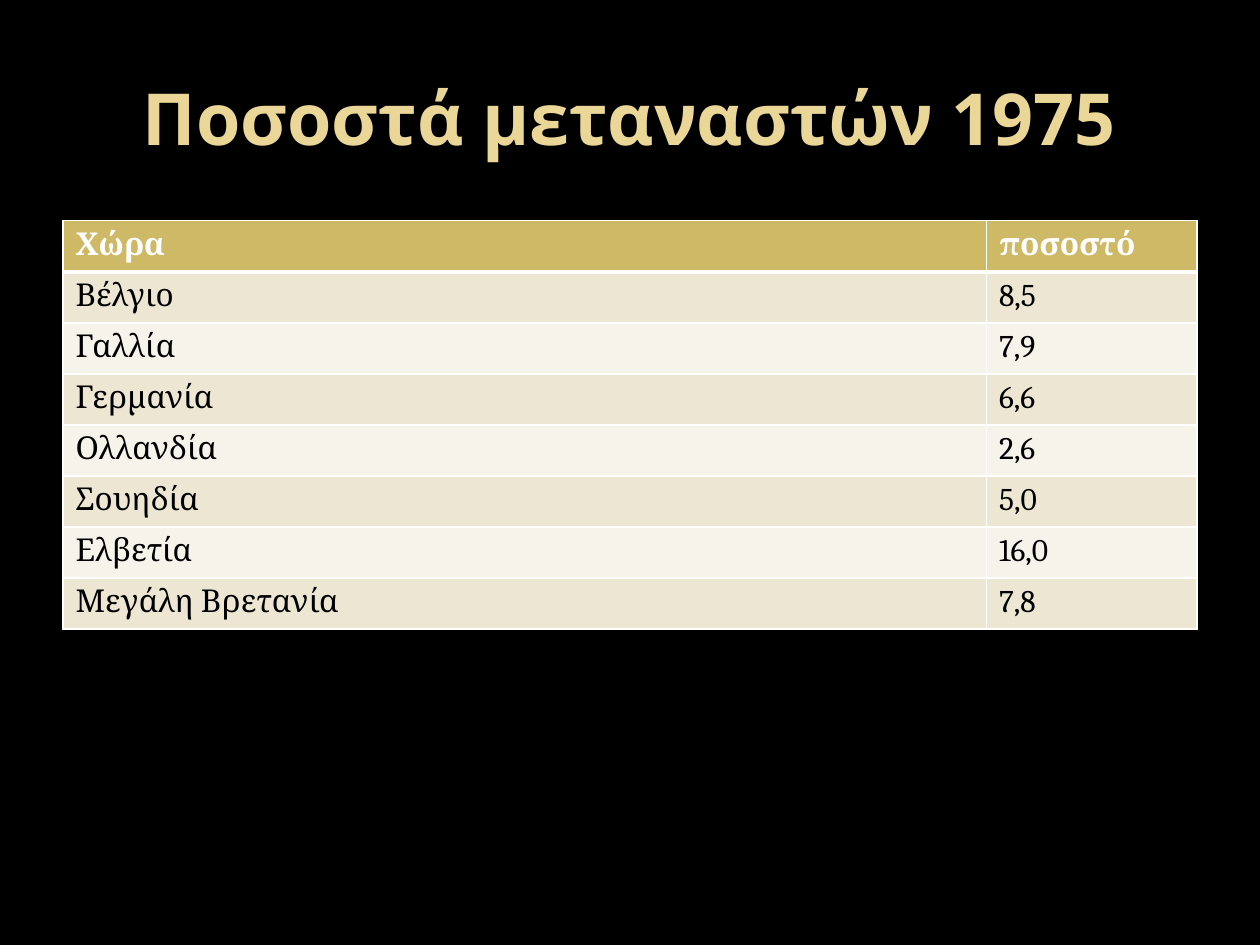
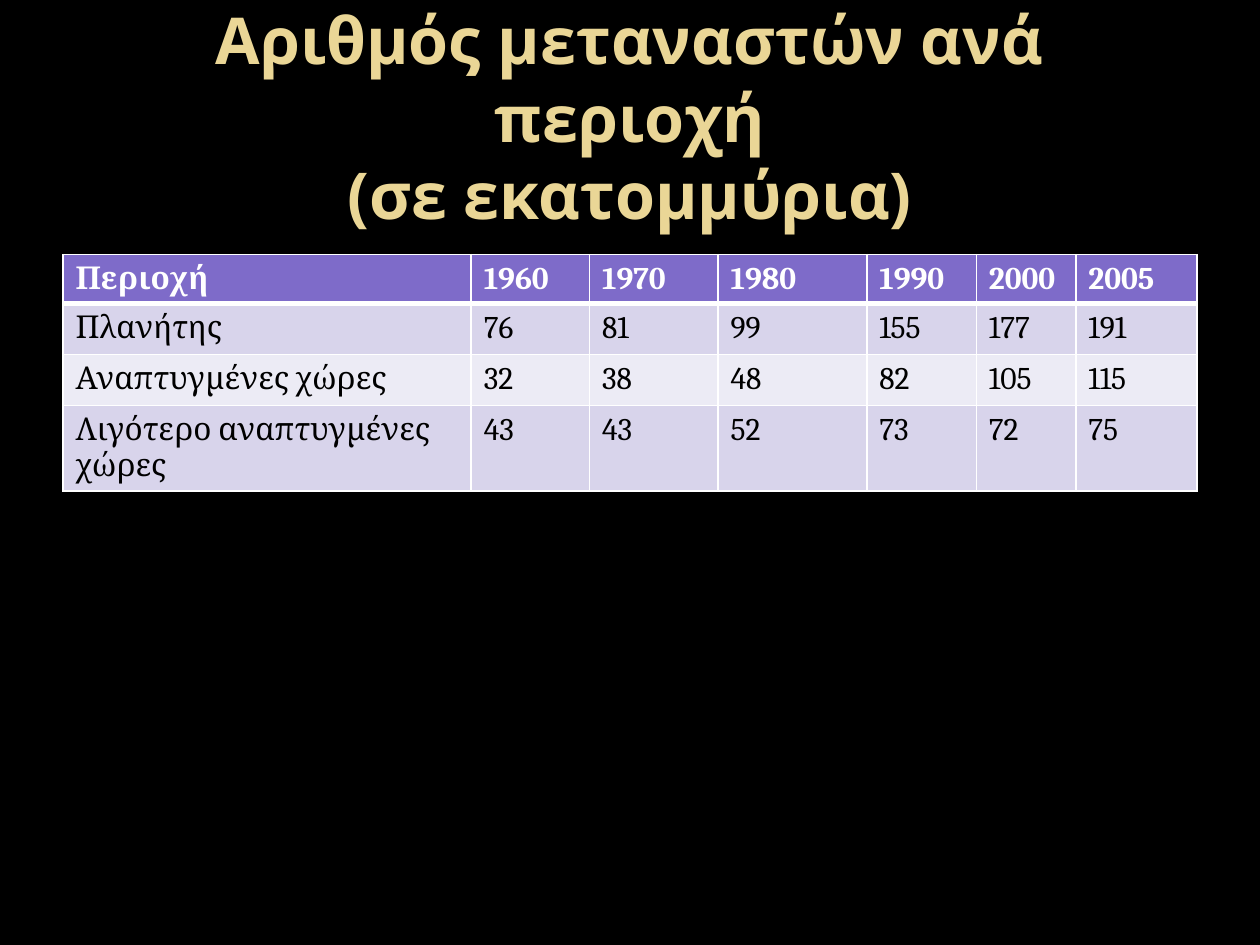
from lxml.etree import SubElement
from pptx import Presentation
from pptx.dml.color import RGBColor
from pptx.enum.text import MSO_ANCHOR, MSO_AUTO_SIZE, PP_ALIGN
from pptx.oxml.ns import qn
from pptx.util import Inches, Pt

# Content
SLIDES = [
    {
        "title": "Ποσοστά μεταναστών 1975",
        "title_size": 41,
        "top": 1.75,
        "cols": [7.33, 1.67],
        "header_height": 0.41,
        "fills": ("CEB966", "EDE6D3", "F6F3EA"),
        "rows": [
            ("Χώρα", "ποσοστό"),
            ("Βέλγιο", "8,5"),
            ("Γαλλία", "7,9"),
            ("Γερμανία", "6,6"),
            ("Ολλανδία", "2,6"),
            ("Σουηδία", "5,0"),
            ("Ελβετία", "16,0"),
            ("Μεγάλη Βρετανία", "7,8"),
        ],
    },
    {
        "title": "Αριθμός μεταναστών ανά περιοχή\v(σε εκατομμύρια)",
        "title_size": 36.9,
        "top": 2.02,
        "cols": [3.24, 0.94, 1.02, 1.18, 0.87, 0.79, 0.96],
        "header_height": 0.14,  # grows to fit its text
        "fills": ("7E6BC9", "D8D4EB", "ECEBF5"),
        "rows": [
            ("Περιοχή", "1960", "1970", "1980", "1990", "2000", "2005"),
            ("Πλανήτης", "76", "81", "99", "155", "177", "191"),
            ("Αναπτυγμένες χώρες", "32", "38", "48", "82", "105", "115"),
            ("Λιγότερο αναπτυγμένες χώρες", "43", "43", "52", "73", "72", "75"),
        ],
    },
]

# Shared look
BLACK, WHITE, GOLD = "000000", "FFFFFF", "EAD696"
TITLE_FONT, TABLE_FONT = "Open Sans", "Cambria"
LEFT, WIDTH = 0.5, 9
TITLE_TOP, TITLE_HEIGHT = 0.3, 1.25
ROW_HEIGHT = 0.405


def rgb(value):
    return RGBColor.from_string(value)


def set_font(p, name, size, color, bold):
    p.font.name, p.font.size, p.font.bold = name, Pt(size), bold
    p.font.color.rgb = rgb(color)


def add_title(s, text, size):
    box = s.shapes.add_textbox(Inches(LEFT), Inches(TITLE_TOP),
                               Inches(WIDTH), Inches(TITLE_HEIGHT))
    tf = box.text_frame
    tf.word_wrap = True
    tf.auto_size = MSO_AUTO_SIZE.NONE
    tf.vertical_anchor = MSO_ANCHOR.MIDDLE
    p = tf.paragraphs[0]
    p.text = text
    p.alignment = PP_ALIGN.CENTER
    set_font(p, TITLE_FONT, size, GOLD, True)


def set_borders(cell, top, bottom):
    tc_pr = cell._tc.get_or_add_tcPr()
    for side, width in (("L", 1), ("R", 1), ("T", top), ("B", bottom)):
        ln = SubElement(tc_pr, qn(f"a:ln{side}"), w=str(Pt(width)))
        fill = SubElement(ln, qn("a:solidFill"))
        SubElement(fill, qn("a:srgbClr"), val=WHITE)


def add_table(s, top, cols, header_height, fills, rows):
    heights = [header_height] + [ROW_HEIGHT] * (len(rows) - 1)
    table = s.shapes.add_table(len(rows), len(cols), Inches(LEFT), Inches(top),
                               Inches(WIDTH), Inches(sum(heights))).table
    for column, width in zip(table.columns, cols):
        column.width = Inches(width)
    header_fill, *bands = fills
    for i, (row, values) in enumerate(zip(table.rows, rows)):
        row.height = Inches(heights[i])
        header = i == 0
        for cell, value in zip(row.cells, values):
            # A thick rule separates the header from the body
            set_borders(cell, top=3 if i == 1 else 1, bottom=3 if header else 1)
            cell.fill.solid()
            cell.fill.fore_color.rgb = rgb(header_fill if header else bands[(i - 1) % 2])
            p = cell.text_frame.paragraphs[0]
            p.text = value
            set_font(p, TABLE_FONT, 18, WHITE if header else BLACK, header)


def main():
    prs = Presentation()
    prs.slide_width, prs.slide_height = Inches(10), Inches(7.5)
    for data in SLIDES:
        s = prs.slides.add_slide(prs.slide_layouts[6])
        s.background.fill.solid()
        s.background.fill.fore_color.rgb = rgb(BLACK)
        add_title(s, data["title"], data["title_size"])
        add_table(s, data["top"], data["cols"], data["header_height"],
                  data["fills"], data["rows"])
    prs.save("out.pptx")


if __name__ == "__main__":
    main()
